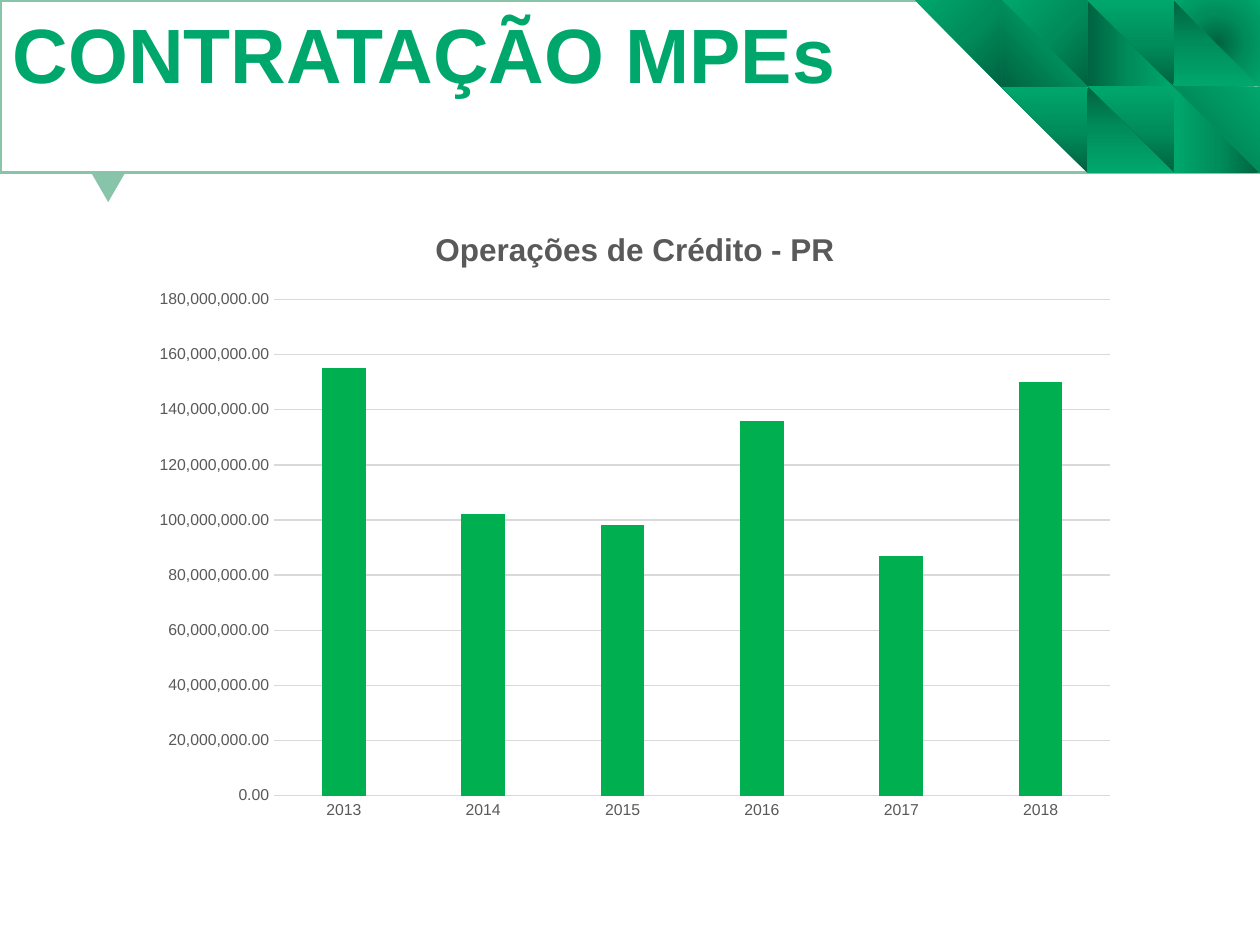
import pptx
import pptx.chart.data
import pptx.dml.color
import pptx.enum.chart
import pptx.enum.shapes
import pptx.enum.text
import pptx.oxml
import pptx.oxml.ns
import pptx.util

Inches = pptx.util.Inches
Pt = pptx.util.Pt
RGBColor = pptx.dml.color.RGBColor
SHAPE = pptx.enum.shapes.MSO_SHAPE
CHART = pptx.enum.chart

WHITE = RGBColor(0xFF, 0xFF, 0xFF)
GREEN = RGBColor(0x00, 0xA7, 0x6D)
MID_GREEN = RGBColor(0x00, 0x8D, 0x5C)
DARK_GREEN = RGBColor(0x00, 0x63, 0x41)
PALE_GREEN = RGBColor(0x88, 0xC4, 0xAA)
BAR_GREEN = RGBColor(0x00, 0xB0, 0x50)
GREY = RGBColor(0x59, 0x59, 0x59)
GRID_GREY = RGBColor(0xD9, 0xD9, 0xD9)

HEADER_H = 1.37
TILE_W, TILE_H = 2.74 / 4, HEADER_H / 2
MOSAIC_LEFT = 10 - 4 * TILE_W

LEFT, DOWN = '<a:lin ang="0" scaled="0"/>', '<a:lin ang="5400000" scaled="0"/>'
UP_RIGHT = '<a:lin ang="10800000" scaled="0"/>'


def radial(l, t, r, b):
    return (f'<a:path path="circle"><a:fillToRect l="{l}000" t="{t}000" '
            f'r="{r}000" b="{b}000"/></a:path>')


BOTTOM_LEFT, BOTTOM_RIGHT = radial(0, 100, 100, 0), radial(100, 100, 0, 0)
CENTRE = radial(50, 50, 50, 50)

TILES = [
    (3, 1, 0, UP_RIGHT), (3, 0, 0, DOWN), (2, 1, 180, DOWN), (2, 0, 0, LEFT),
    (1, 0, 180, BOTTOM_RIGHT), (3, 1, 180, BOTTOM_LEFT), (3, 0, 180, CENTRE),
    (2, 0, 180, DOWN), (2, 1, 0, DOWN), (1, 1, 180, DOWN),
    (1, 0, 0, BOTTOM_LEFT), (0, 0, 180, BOTTOM_RIGHT),
]


def write(tf, text, **fmt):
    p = tf.paragraphs[0]
    r = p.add_run()
    r.text = text
    style(r.font, **fmt)
    return p


def style(font, size, color, bold=False, name="Arial"):
    font.name, font.size, font.bold = name, Pt(size), bold
    font.color.rgb = color


class Deck:
    """Hold the presentation style and the current slide."""

    def __init__(self):
        self.prs = pptx.Presentation()
        self.prs.slide_width, self.prs.slide_height = Inches(10), Inches(7.5)
        self.s = self.prs.slides.add_slide(self.prs.slide_layouts[5])

    def shape(self, kind, box, fill=None, line=None, rotation=0):
        sp = self.s.shapes.add_shape(kind, *map(Inches, box))
        sp.shadow.inherit = False
        sp.rotation = rotation
        if fill is not None:
            sp.fill.solid()
            sp.fill.fore_color.rgb = fill
        if line is None:
            sp.line.fill.background()
        else:
            sp.line.color.rgb, sp.line.width = line, Pt(2)
        return sp

    def tile(self, col, row, rotation, direction):
        box = (MOSAIC_LEFT + col * TILE_W, row * TILE_H, TILE_W, TILE_H)
        sp = self.shape(SHAPE.RIGHT_TRIANGLE, box, rotation=rotation)
        stops = "".join(
            f'<a:gs pos="{pos}"><a:srgbClr val="{color}"/></a:gs>'
            for pos, color in ((0, DARK_GREEN), (50000, MID_GREEN), (100000, GREEN)))
        grad = pptx.oxml.parse_xml(
            f'<a:gradFill {pptx.oxml.ns.nsdecls("a")} rotWithShape="1">'
            f'<a:gsLst>{stops}</a:gsLst>{direction}</a:gradFill>')
        sp.element.spPr.find(pptx.oxml.ns.qn("a:prstGeom")).addnext(grad)

    def title(self, text, box):
        sp = self.s.shapes.title
        sp.left, sp.top, sp.width, sp.height = map(Inches, box)
        self.s.shapes.element.append(sp.element)
        tf = sp.text_frame
        tf.word_wrap = True
        tf.auto_size = pptx.enum.text.MSO_AUTO_SIZE.NONE
        tf.vertical_anchor = pptx.enum.text.MSO_ANCHOR.TOP
        p = write(tf, text, size=44, color=GREEN, bold=True)
        p.alignment = pptx.enum.text.PP_ALIGN.LEFT

    def column_chart(self, title, cats, vals, box):
        data = pptx.chart.data.CategoryChartData(number_format="#,##0.00")
        data.categories = cats
        data.add_series("Series 1", vals)
        chart = self.s.shapes.add_chart(
            CHART.XL_CHART_TYPE.COLUMN_CLUSTERED, *map(Inches, box), data).chart
        style(chart.font, 10, GREY)
        chart.has_legend = False
        chart.has_title = True
        write(chart.chart_title.text_frame, title, size=18, color=GREY, bold=True)
        chart.chart_title.include_in_layout = False

        plot = chart.plots[0]
        plot.gap_width, plot.overlap, plot.vary_by_categories = 219, -27, False
        fill = plot.series[0].format.fill
        fill.solid()
        fill.fore_color.rgb = BAR_GREEN

        for axis in (chart.category_axis, chart.value_axis):
            axis.major_tick_mark = axis.minor_tick_mark = CHART.XL_TICK_MARK.NONE
            style(axis.tick_labels.font, 9, GREY)
        axis.minimum_scale, axis.maximum_scale = 0, 180_000_000
        axis.major_unit = 20_000_000
        axis.tick_labels.number_format = "#,##0.00"
        axis.tick_labels.number_format_is_linked = False
        axis.format.line.fill.background()
        for line in (chart.category_axis.format.line, axis.major_gridlines.format.line):
            line.color.rgb, line.width = GRID_GREY, Pt(0.75)


def main():
    deck = Deck()
    deck.shape(SHAPE.ISOSCELES_TRIANGLE, (0.66, 1.03, 0.53, 0.46),
               PALE_GREEN, rotation=60)
    deck.shape(SHAPE.RECTANGLE, (0, 0, 10, HEADER_H), WHITE, PALE_GREEN)
    for tile in TILES:
        deck.tile(*tile)
    deck.title("CONTRATAÇÃO MPEs", (0, 0, 7.44, 0.84))
    millions = (155, 102, 98, 136, 87, 150)
    deck.column_chart("Operações de Crédito - PR",
                      [str(year) for year in range(2013, 2019)],
                      [m * 1_000_000 for m in millions], (1.11, 1.62, 7.86, 4.98))
    deck.prs.save("out.pptx")


if __name__ == "__main__":
    main()
